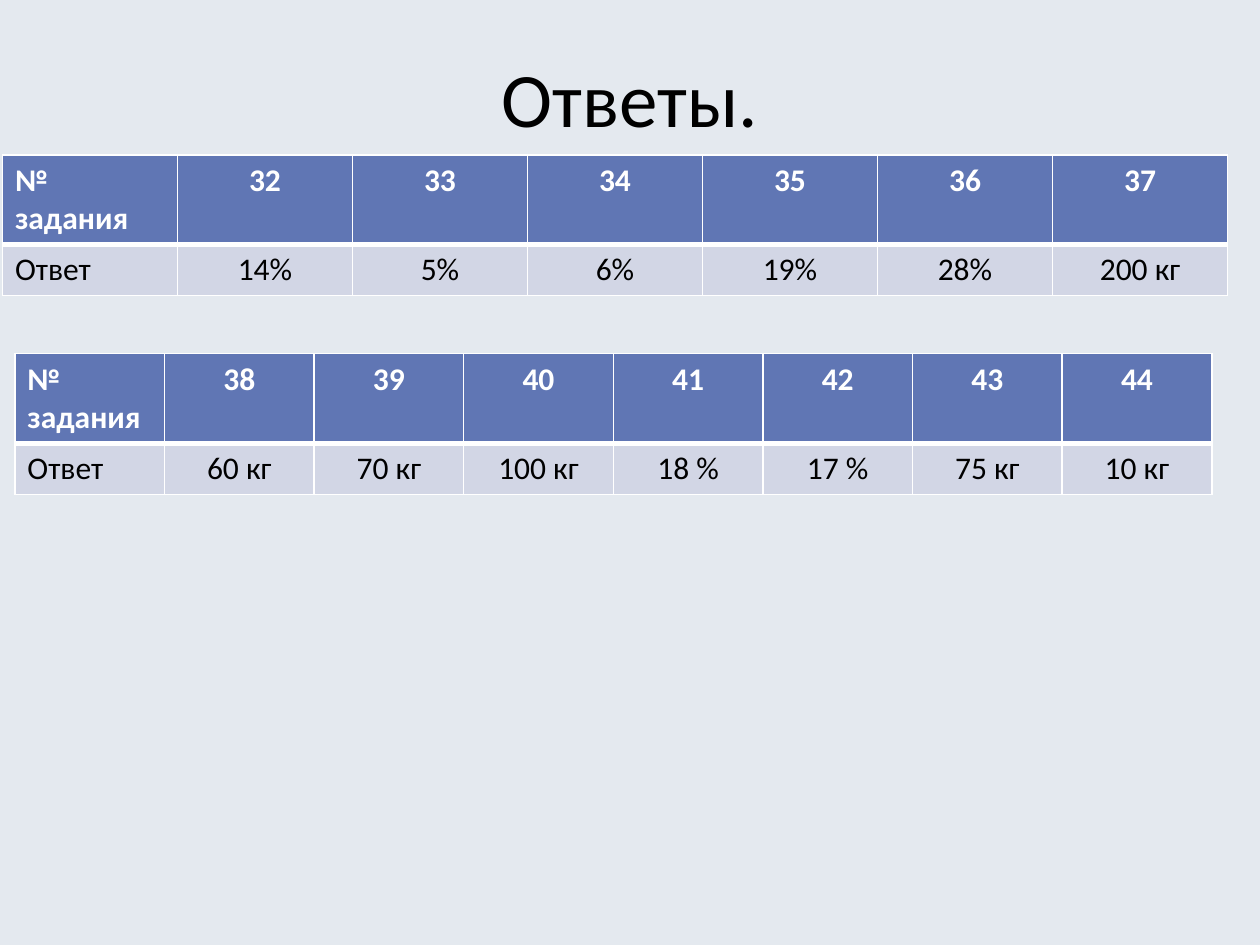
from dataclasses import dataclass

from lxml import etree
from pptx import Presentation
from pptx.dml.color import RGBColor
from pptx.enum.text import MSO_ANCHOR, PP_ALIGN
from pptx.oxml.ns import qn
from pptx.util import Cm, Pt

LEFT, CENTER = PP_ALIGN.LEFT, PP_ALIGN.CENTER
MIDDLE = MSO_ANCHOR.MIDDLE
TITLE_ONLY = 5


@dataclass(frozen=True)
class Theme:
    font: str = "Calibri"
    background: str = "E4E9EF"
    header: str = "6076B4"
    body: str = "D2D6E5"
    light: str = "FFFFFF"
    dark: str = "000000"
    title_size: int = 44
    cell_size: int = 18
    border: int = 1
    header_rule: int = 3


THEME = Theme()
HEADER_HEIGHT, BODY_HEIGHT = Cm(1.78), Cm(1.03)


def rgb(value):
    return RGBColor.from_string(value)


def format_paragraph(p, size, color, align, bold=False):
    p.alignment = align
    for r in p.runs:
        r.font.name = THEME.font
        r.font.size = Pt(size)
        r.font.bold = bold
        r.font.color.rgb = rgb(color)


def set_borders(cell, bottom):
    """Draw the four cell edges; call before filling the cell."""
    tc_pr = cell._tc.get_or_add_tcPr()
    for side in "LRTB":
        width = bottom if side == "B" else THEME.border
        ln = etree.SubElement(tc_pr, qn(f"a:ln{side}"), w=str(Pt(width)))
        fill = etree.SubElement(ln, qn("a:solidFill"))
        etree.SubElement(fill, qn("a:srgbClr"), val=THEME.light)


def add_title(s, text, left, top, width, height):
    sp = s.shapes.title
    sp.left, sp.top, sp.width, sp.height = left, top, width, height
    tf = sp.text_frame
    tf.text = text
    tf.vertical_anchor = MIDDLE
    format_paragraph(tf.paragraphs[0], THEME.title_size, THEME.dark, CENTER)


def add_answer_table(s, answers, left, top, width):
    """Place task numbers over their answers in equal columns."""
    rows = (["№ задания", *map(str, answers)], ["Ответ", *answers.values()])
    count = len(rows[0])
    table = s.shapes.add_table(
        len(rows), count, left, top, width, HEADER_HEIGHT + BODY_HEIGHT).table
    for column in table.columns:
        column.width = width // count
    table.rows[0].height, table.rows[1].height = HEADER_HEIGHT, BODY_HEIGHT

    for i, row in enumerate(rows):
        is_header = i == 0
        for j, text in enumerate(row):
            cell = table.cell(i, j)
            set_borders(cell, THEME.header_rule if is_header else THEME.border)
            cell.fill.solid()
            cell.fill.fore_color.rgb = rgb(THEME.header if is_header else THEME.body)
            cell.text_frame.text = text
            format_paragraph(
                cell.text_frame.paragraphs[0], THEME.cell_size,
                THEME.light if is_header else THEME.dark,
                LEFT if j == 0 else CENTER, bold=is_header)


def main():
    prs = Presentation()
    prs.slide_width, prs.slide_height = Cm(25.4), Cm(19.05)
    s = prs.slides.add_slide(prs.slide_layouts[TITLE_ONLY])
    s.background.fill.solid()
    s.background.fill.fore_color.rgb = rgb(THEME.background)

    add_title(s, "Ответы.", Cm(1.27), Cm(0.76), Cm(22.86), Cm(2.36))
    first = {32: "14%", 33: "5%", 34: "6%", 35: "19%", 36: "28%", 37: "200 кг"}
    second = {38: "60 кг", 39: "70 кг", 40: "100 кг", 41: "18 %",
              42: "17 %", 43: "75 кг", 44: "10 кг"}
    add_answer_table(s, first, Cm(0.05), Cm(3.12), Cm(24.7))
    add_answer_table(s, second, Cm(0.3), Cm(7.13), Cm(24.13))
    prs.save("out.pptx")


if __name__ == "__main__":
    main()
